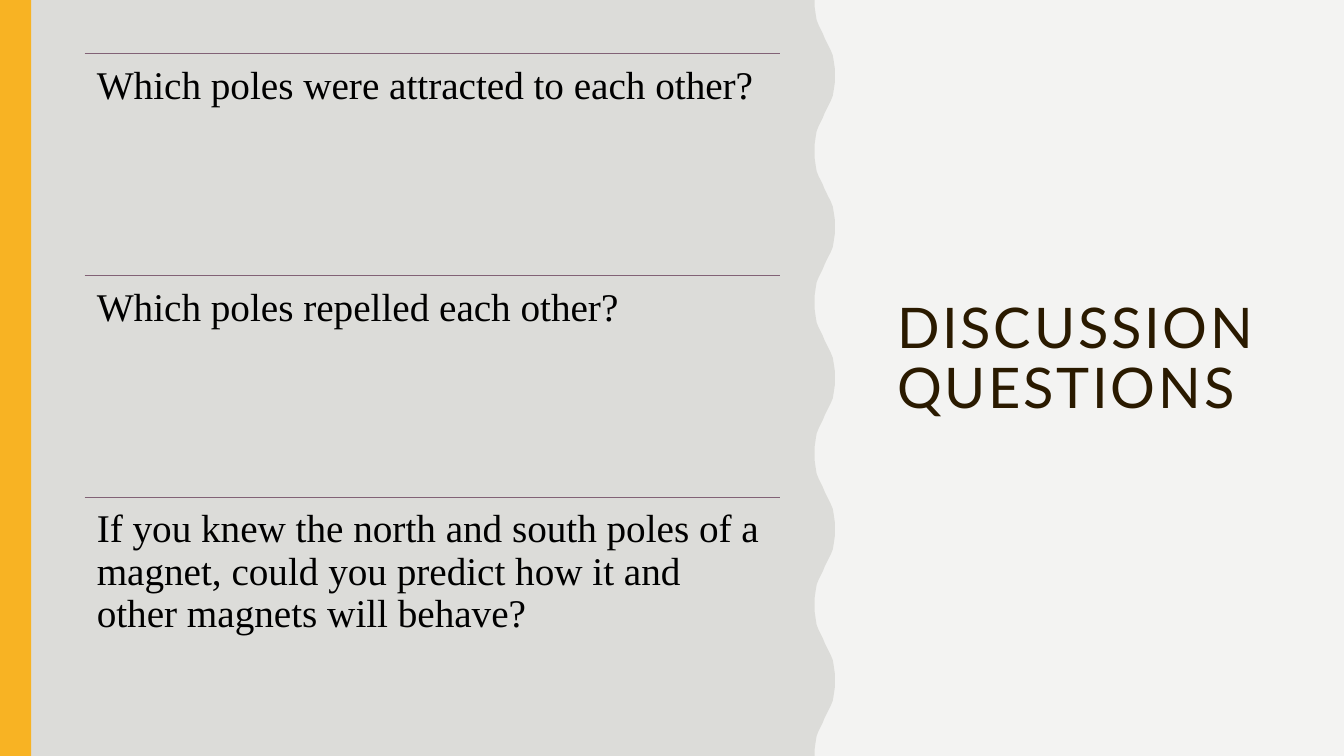
from dataclasses import dataclass

from lxml.etree import SubElement
from pptx import Presentation
from pptx.dml.color import RGBColor
from pptx.enum.shapes import MSO_CONNECTOR, MSO_SHAPE
from pptx.enum.text import MSO_ANCHOR
from pptx.oxml.ns import qn
from pptx.util import Inches, Pt


@dataclass(frozen=True)
class Theme:
    background: str = "F3F3F2"
    panel: str = "DCDCD9"
    accent: str = "F8B323"
    rule: str = "826276"
    title: str = "2A1A00"
    body: str = "000000"
    title_font: str = "Lato"
    body_font: str = "Times New Roman"
    title_size: int = 40
    body_size: int = 28
    rule_width: float = 0.5


THEME = Theme()
WIDTH, HEIGHT = 13.33, 7.5

QUESTIONS = [
    "Which poles were attracted to each other?",
    "Which poles repelled each other?",
    "If you knew the north and south poles of a magnet, could you predict "
    "how it and other magnets will behave?",
]
LIST_LEFT, LIST_TOP, LIST_WIDTH, ROW_HEIGHT = 0.84, 0.53, 6.9, 2.2

# Wavy edge: (across, down) from a trough to the next crest
WAVE_LEFT, WAVE_PERIOD, WAVE_COUNT = 8.08, 1.5, 5
RISING = [
    (0, 0), (0, 0.07), (0.01, 0.14), (0.02, 0.2), (0.04, 0.25),
    (0.06, 0.29), (0.08, 0.33), (0.1, 0.38), (0.12, 0.42), (0.14, 0.46),
    (0.16, 0.5), (0.18, 0.55), (0.19, 0.61), (0.2, 0.68), (0.2, 0.75),
]


def paint(shape, color):
    shape.fill.solid()
    shape.fill.fore_color.rgb = RGBColor.from_string(color)
    shape.line.fill.background()
    shape.shadow.inherit = False


def add_wavy_panel(page):
    falling = [(across, WAVE_PERIOD - down) for across, down in RISING[-2::-1]]
    edge = [
        (WAVE_LEFT + across, wave * WAVE_PERIOD + down)
        for wave in range(WAVE_COUNT)
        for across, down in RISING + falling
    ]
    outline = [(0, 0)] + edge + [(0, HEIGHT)]
    points = [(Inches(x), Inches(y)) for x, y in outline]
    builder = page.shapes.build_freeform(*points[0])
    builder.add_line_segments(points[1:], close=True)
    paint(builder.convert_to_shape(), THEME.panel)


def add_bar(page, left, top, width, height):
    bar = page.shapes.add_shape(
        MSO_SHAPE.RECTANGLE, Inches(left), Inches(top), Inches(width), Inches(height))
    paint(bar, THEME.accent)


def add_rule(page, left, top, width):
    rule = page.shapes.add_connector(
        MSO_CONNECTOR.STRAIGHT,
        Inches(left), Inches(top), Inches(left + width), Inches(top))
    rule.line.color.rgb = RGBColor.from_string(THEME.rule)
    rule.line.width = Pt(THEME.rule_width)
    SubElement(rule._element.spPr, qn("a:effectLst"))


def add_text(page, bounds, text, font, size, color, inset, anchor):
    box = page.shapes.add_textbox(*(Inches(length) for length in bounds))
    frame = box.text_frame
    frame.word_wrap = True
    frame.vertical_anchor = anchor
    frame.margin_left = frame.margin_right = Inches(inset)
    frame.margin_top = frame.margin_bottom = Inches(inset)
    para = frame.paragraphs[0]
    para.line_spacing = 0.9
    span = para.add_run()
    span.text = text
    span.font.name = font
    span.font.size = Pt(size)
    span.font.color.rgb = RGBColor.from_string(color)
    return span


def add_title(page):
    span = add_text(
        page, (8.8, 0.53, 4, 6.09), "DISCUSSION QUESTIONS",
        THEME.title_font, THEME.title_size, THEME.title, 0.1, MSO_ANCHOR.MIDDLE)
    # Letter spacing of 2 points
    span.font._element.set("spc", "200")


def add_question(page, row, question):
    top = LIST_TOP + row * ROW_HEIGHT
    add_rule(page, LIST_LEFT, top, LIST_WIDTH)
    add_text(
        page, (LIST_LEFT, top, LIST_WIDTH, ROW_HEIGHT), question,
        THEME.body_font, THEME.body_size, THEME.body, 0.12, MSO_ANCHOR.TOP)


def main():
    deck = Presentation()
    deck.slide_width, deck.slide_height = Inches(WIDTH), Inches(HEIGHT)
    page = deck.slides.add_slide(deck.slide_layouts[6])

    # Background, wavy panel and accent bar
    page.background.fill.solid()
    page.background.fill.fore_color.rgb = RGBColor.from_string(THEME.background)
    add_wavy_panel(page)
    add_bar(page, 0, 0, 0.31, HEIGHT)

    # Title and ruled list of questions
    add_title(page)
    for row, question in enumerate(QUESTIONS):
        add_question(page, row, question)

    deck.save("out.pptx")


if __name__ == "__main__":
    main()
